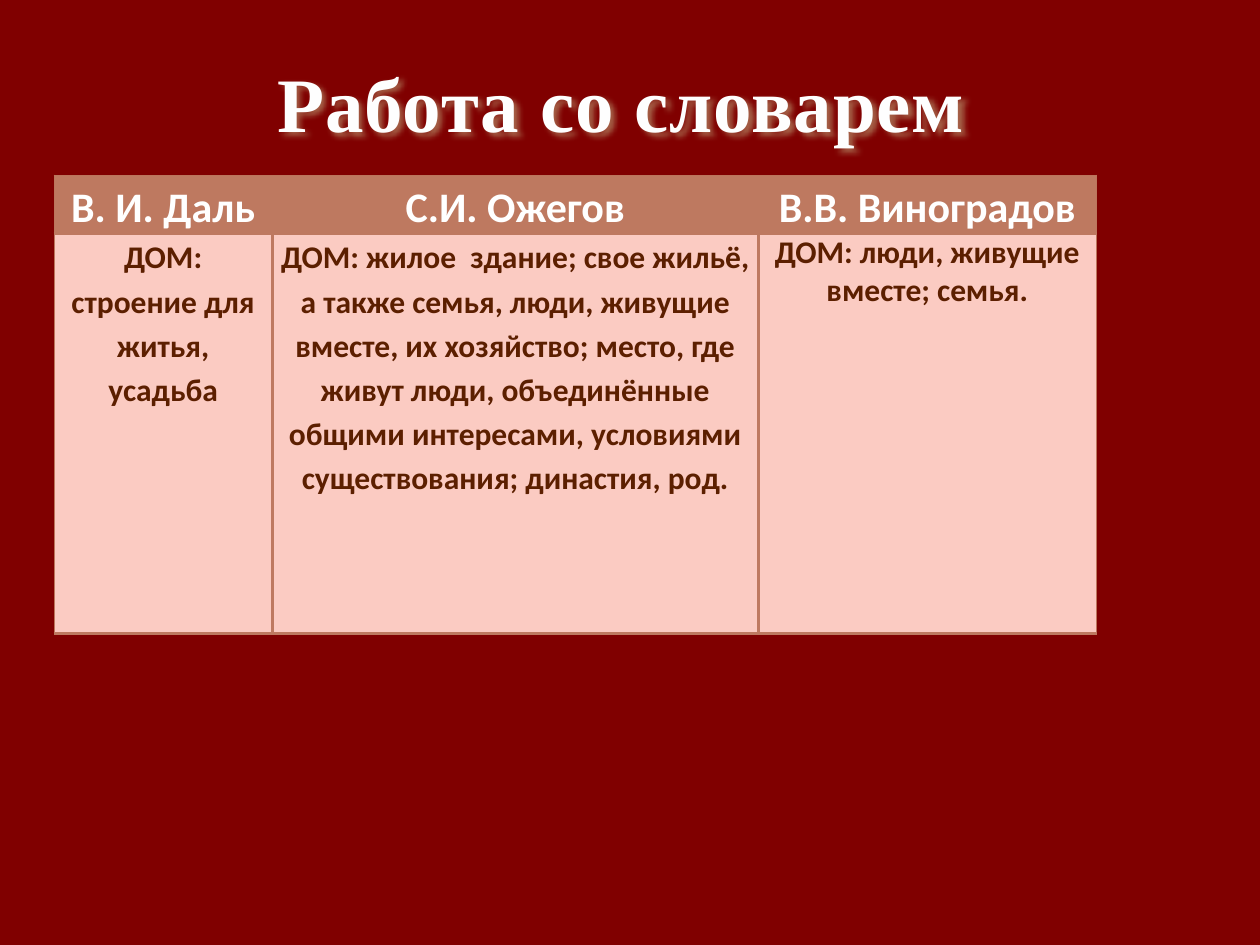
"""Builds a slide comparing three dictionary entries for one word."""
from lxml.etree import SubElement
from pptx import Presentation
from pptx.dml.color import RGBColor
from pptx.enum.text import MSO_ANCHOR, PP_ALIGN
from pptx.oxml import parse_xml
from pptx.oxml.ns import nsdecls, qn
from pptx.util import Inches, Pt

TITLE = "Работа со словарем"
ENTRIES = [
    ("В. И. Даль", "ДОМ: строение для житья, усадьба", 1.73, 1.15),
    ("С.И. Ожегов", "ДОМ: жилое  здание; свое жильё, а также семья, люди, живущие "
     "вместе, их хозяйство; место, где живут люди, объединённые общими интересами, "
     "условиями существования; династия, род.", 3.86, 1.15),
    ("В.В. Виноградов", "ДОМ: люди, живущие вместе; семья.", 2.68, None),
]
ROW_HEIGHTS = [0.46, 3.18]
HEADER = {"size": 24, "color": "FFFFFF", "fill": "BE7960"}
BODY = {"size": 18, "color": "5C1F00", "fill": "FBCBC2"}
OUTER, INNER = ("BC755C", 0.75), ("BE7960", 2)
NO_STYLE = "{2D5ABB26-0587-4C30-8999-92F81FD0307C}"


def rgb(value):
    return RGBColor.from_string(value)


def write(paragraph, text, size, color, name):
    span = paragraph.add_run()
    span.text = text
    for key, value in {"size": Pt(size), "bold": True, "name": name}.items():
        setattr(span.font, key, value)
    span.font.color.rgb = rgb(color)
    return span


def add_border(cell, side, color, width):
    line = SubElement(cell._tc.get_or_add_tcPr(), qn("a:ln" + side), w=str(Pt(width)))
    fill = SubElement(line, qn("a:solidFill"))
    SubElement(fill, qn("a:srgbClr"), val=color)


def cell_borders(row, column):
    last = len(ENTRIES) - 1
    divider = INNER if row else None
    return {
        "L": OUTER if column == 0 else divider,
        "R": OUTER if column == last else divider,
        "T": INNER if row else OUTER,
        "B": INNER,
    }


def add_title(page):
    box = page.shapes.add_textbox(Inches(0.5), Inches(0.3), Inches(9), Inches(1.01))
    frame = box.text_frame
    frame.word_wrap = True
    frame.vertical_anchor = MSO_ANCHOR.MIDDLE
    frame.margin_left = Inches(1.7)
    span = write(frame.paragraphs[0], TITLE, 44, "FEFEFE", "Times New Roman")
    properties = span._r.get_or_add_rPr()
    properties.set("spc", "50")
    properties.insert(0, parse_xml(
        f'<a:ln {nsdecls("a")} w="{Pt(1)}"><a:solidFill>'
        '<a:srgbClr val="A45F46"/></a:solidFill></a:ln>'))
    box._element.spPr.append(parse_xml(
        f'<a:effectLst {nsdecls("a")}><a:outerShdw blurRad="{Pt(3)}" '
        f'dist="{Pt(2)}" dir="2700000"><a:srgbClr val="A45F46"/>'
        '</a:outerShdw></a:effectLst>'))


def fill_cell(cell, row, column, text, look, spacing):
    for side, border in cell_borders(row, column).items():
        if border:
            add_border(cell, side, *border)
    cell.fill.solid()
    cell.fill.fore_color.rgb = rgb(look["fill"])
    cell.margin_left = cell.margin_right = Inches(0.07)
    cell.margin_top = cell.margin_bottom = 0
    paragraph = cell.text_frame.paragraphs[0]
    paragraph.alignment = PP_ALIGN.CENTER
    paragraph.line_spacing = spacing
    write(paragraph, text, look["size"], look["color"], "Calibri")


def add_dictionary(page):
    width = sum(entry[2] for entry in ENTRIES)
    table = page.shapes.add_table(
        len(ROW_HEIGHTS), len(ENTRIES), Inches(0.43), Inches(1.39),
        Inches(width), Inches(sum(ROW_HEIGHTS))).table
    table._tbl.tblPr.find(qn("a:tableStyleId")).text = NO_STYLE
    for row, height in zip(table.rows, ROW_HEIGHTS):
        row.height = Inches(height)
    for column, (author, meaning, share, spacing) in enumerate(ENTRIES):
        table.columns[column].width = Inches(share)
        fill_cell(table.cell(0, column), 0, column, author, HEADER, 1.15)
        fill_cell(table.cell(1, column), 1, column, meaning, BODY, spacing)


def main():
    deck = Presentation()
    deck.slide_width, deck.slide_height = Inches(10), Inches(7.5)
    page = deck.slides.add_slide(deck.slide_layouts[6])
    page.background.fill.solid()
    page.background.fill.fore_color.rgb = rgb("800000")
    add_title(page)
    add_dictionary(page)
    deck.save("out.pptx")


if __name__ == "__main__":
    main()
